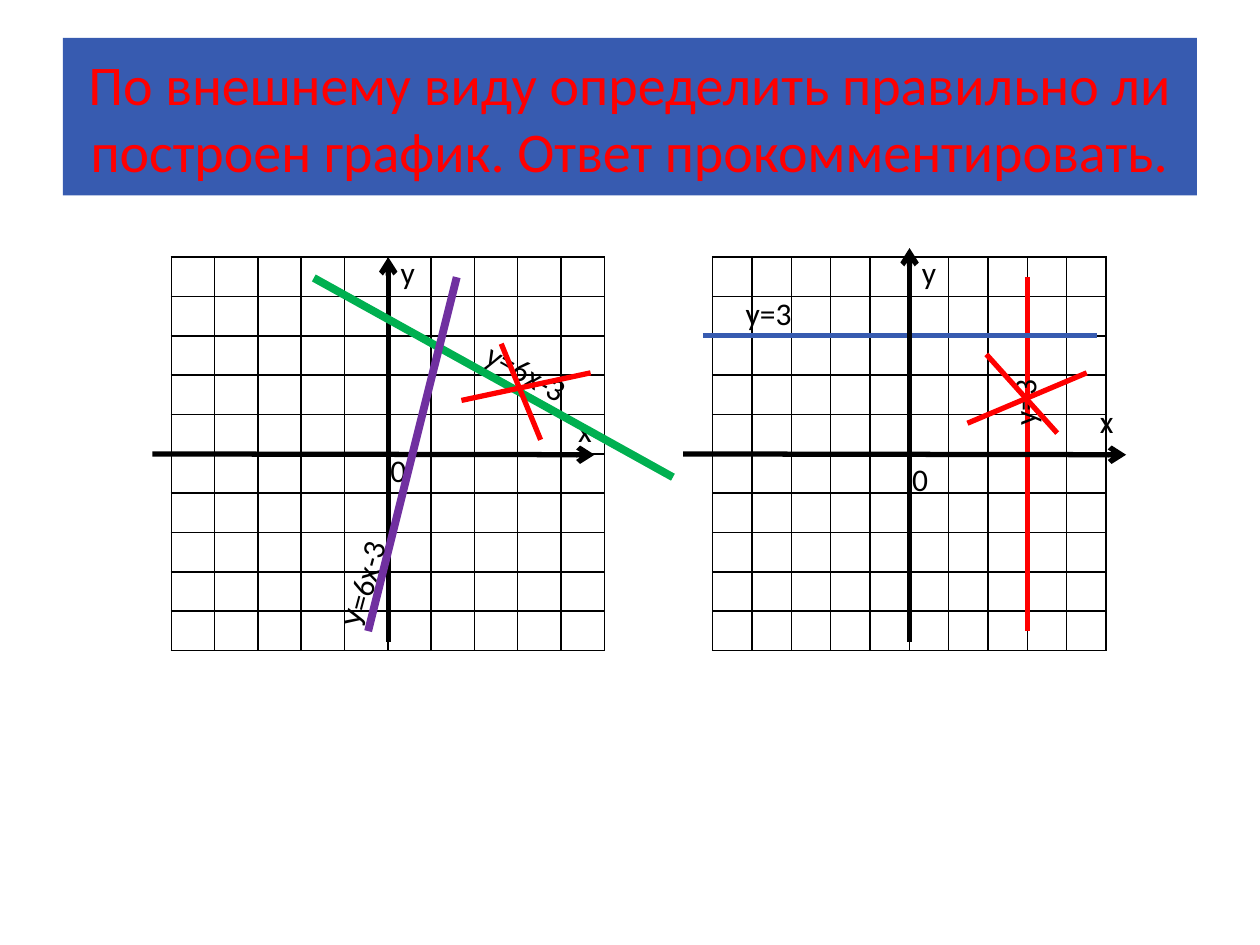
from dataclasses import dataclass

import pptx
import pptx.dml.color
import pptx.enum.shapes
import pptx.enum.text
import pptx.oxml
import pptx.oxml.ns
import pptx.slide
import pptx.util

RGBColor = pptx.dml.color.RGBColor
BLACK = RGBColor(0x00, 0x00, 0x00)
RED = RGBColor(0xFF, 0x00, 0x00)
BLUE = RGBColor(0x37, 0x5B, 0xB0)
GREEN = RGBColor(0x00, 0xB0, 0x50)
PURPLE = RGBColor(0x70, 0x30, 0xA0)

FONT = "Calibri"
SLIDE_WIDTH = pptx.util.Inches(10)
SLIDE_HEIGHT = pptx.util.Inches(7.5)
UNIT = SLIDE_WIDTH / 32  # the slide is a lattice of 32 columns and 24 rows
CELLS = 10
NAMESPACE = pptx.oxml.ns.nsdecls("a")
TITLE = "По внешнему виду определить правильно ли построен график. Ответ прокомментировать."


# All positions and sizes are lattice columns and rows.
@dataclass(frozen=True)
class Grid:
    left: float
    top: float
    width: float
    height: float


@dataclass(frozen=True)
class Line:
    x1: float
    y1: float
    x2: float
    y2: float
    color: RGBColor
    weight: float = 3
    arrow: bool = False


@dataclass(frozen=True)
class Label:
    text: str
    left: float
    top: float
    width: float
    rotation: float = 0


GRIDS = [Grid(18.1, 6.53, 10, 10), Grid(4.35, 6.53, 11, 10)]

MARKS = [
    # Left axes
    Label("х", 14.37, 10.27, 1.76),
    Line(9.86, 16.3, 9.86, 6.53, BLACK, arrow=True),
    Label("у", 9.86, 6.27, 1.5),
    Line(3.87, 11.53, 15.1, 11.55, BLACK, arrow=True),
    Label("0", 9.6, 11.3, 1.79),
    # Left graphs
    Line(7.97, 7.06, 17.09, 12.12, GREEN, 4.5),
    Label("у=6х-3", 11.97, 8.83, 2.88, 29.3),
    Line(11.6, 7.04, 9.35, 16.03, PURPLE, 4.5),
    Label("У=6х-3", 7.78, 14.18, 2.88, 285),
    # Right graphs
    Line(26.1, 7.04, 26.1, 16.03, RED),
    Label("у=3", 25.06, 9.54, 1.89, 270),
    Line(17.85, 8.53, 27.87, 8.53, BLUE),
    Label("у=3", 18.62, 7.3, 1.82),
    # Right axes
    Line(23.1, 16.3, 23.1, 6.3, BLACK, arrow=True),
    Label("у", 23.1, 6.27, 1.76),
    Line(17.35, 11.53, 28.6, 11.55, BLACK, arrow=True),
    Label("х", 27.62, 10.05, 1.5),
    Label("0", 22.85, 11.52, 1.57),
    # Crosses over the wrong graphs
    Line(15, 9.47, 11.72, 10.17, RED),
    Line(12.73, 8.73, 13.73, 11.17, RED),
    Line(27.6, 9.47, 24.57, 10.75, RED),
    Line(25.05, 9, 26.85, 11, RED),
]


def lattice(*values: float) -> list[int]:
    return [round(value * UNIT) for value in values]


def format_text(text_frame, size: float, color: RGBColor) -> None:
    text_frame.word_wrap = True
    for run in text_frame.paragraphs[0].runs:
        run.font.name = FONT
        run.font.size = pptx.util.Pt(size)
        run.font.color.rgb = color


def add_title(slide: pptx.slide.Slide) -> None:
    shape = slide.shapes.add_shape(
        pptx.enum.shapes.MSO_SHAPE.RECTANGLE, *lattice(1.6, 0.96, 28.8, 4))
    shape.shadow.inherit = False
    shape.fill.solid()
    shape.fill.fore_color.rgb = BLUE
    shape.line.fill.background()
    text_frame = shape.text_frame
    text_frame.text = TITLE
    text_frame.vertical_anchor = pptx.enum.text.MSO_ANCHOR.MIDDLE
    text_frame.paragraphs[0].alignment = pptx.enum.text.PP_ALIGN.CENTER
    format_text(text_frame, 32, RED)


def add_grid(slide: pptx.slide.Slide, grid: Grid) -> None:
    table = slide.shapes.add_table(
        CELLS, CELLS, *lattice(grid.left, grid.top, grid.width, grid.height)).table
    table.first_row = table.horz_banding = False
    for column in table.columns:
        column.width, = lattice(grid.width / CELLS)
    for row in table.rows:
        row.height, = lattice(grid.height / CELLS)
    for cell in table.iter_cells():
        cell.margin_left = cell.margin_right = cell.margin_top = cell.margin_bottom = 0
        cell.fill.background()
        properties = cell._tc.get_or_add_tcPr()
        for index, side in enumerate(("lnL", "lnR", "lnT", "lnB")):
            properties.insert(index, pptx.oxml.parse_xml(
                f'<a:{side} {NAMESPACE} w="{pptx.util.Pt(1)}"><a:solidFill>'
                f'<a:srgbClr val="{BLACK}"/></a:solidFill></a:{side}>'))


def add_line(slide: pptx.slide.Slide, line: Line) -> None:
    connector = slide.shapes.add_connector(
        pptx.enum.shapes.MSO_CONNECTOR.STRAIGHT,
        *lattice(line.x1, line.y1, line.x2, line.y2))
    connector.line.color.rgb = line.color
    connector.line.width = pptx.util.Pt(line.weight)
    if line.arrow:
        connector.line._get_or_add_ln().append(
            pptx.oxml.parse_xml(f'<a:tailEnd {NAMESPACE} type="arrow"/>'))
    connector._element.spPr.append(pptx.oxml.parse_xml(f"<a:effectLst {NAMESPACE}/>"))


def add_label(slide: pptx.slide.Slide, label: Label) -> None:
    box = slide.shapes.add_textbox(*lattice(label.left, label.top, label.width, 1.28))
    box.rotation = label.rotation
    box.text_frame.text = label.text
    format_text(box.text_frame, 18, BLACK)


def main() -> None:
    presentation = pptx.Presentation()
    presentation.slide_width = SLIDE_WIDTH
    presentation.slide_height = SLIDE_HEIGHT
    slide = presentation.slides.add_slide(presentation.slide_layouts[6])

    add_title(slide)
    for grid in GRIDS:
        add_grid(slide, grid)
    for mark in MARKS:
        if isinstance(mark, Line):
            add_line(slide, mark)
        else:
            add_label(slide, mark)

    presentation.save("out.pptx")


if __name__ == "__main__":
    main()
